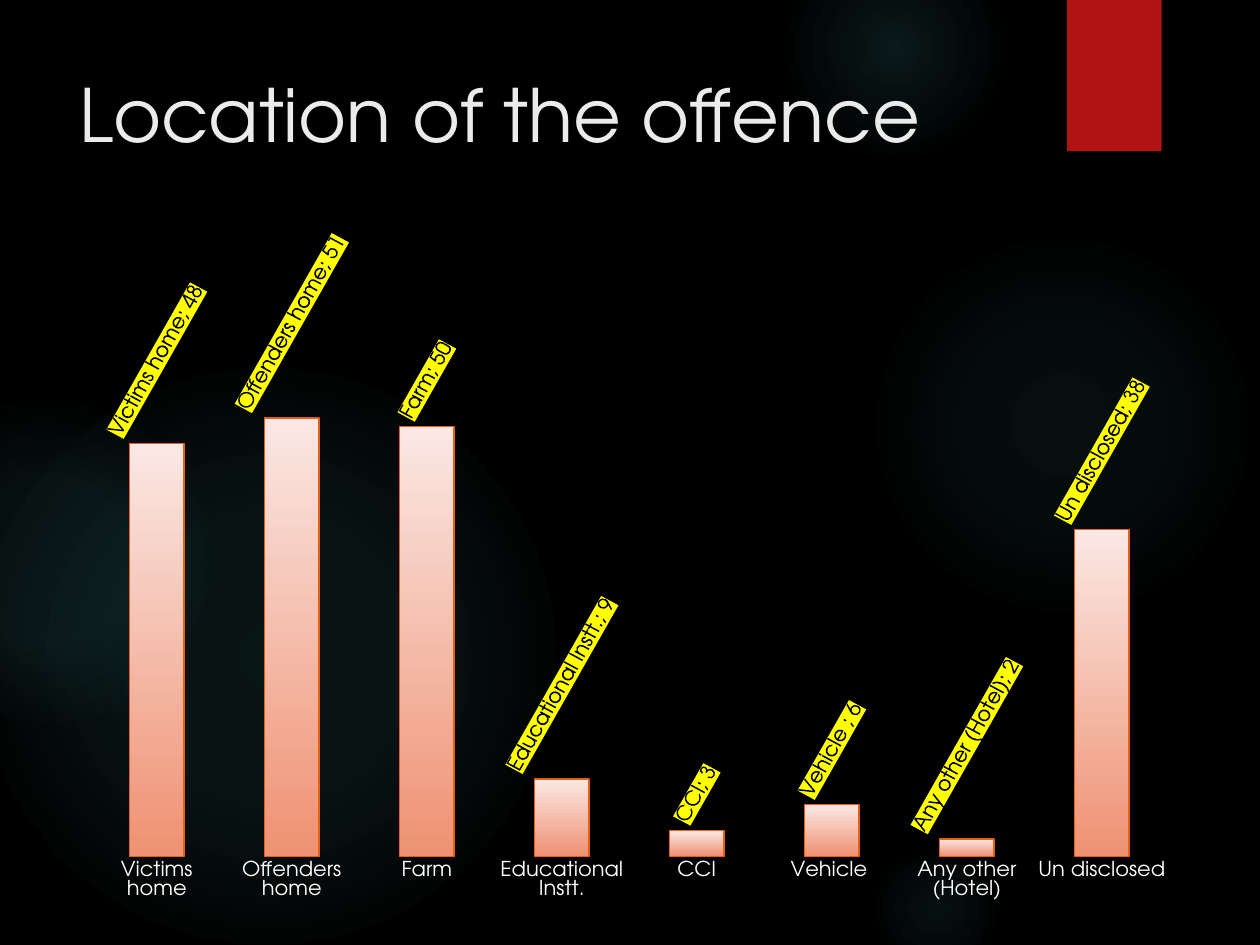
from lxml.etree import SubElement
from pptx import Presentation
from pptx.chart.data import CategoryChartData
from pptx.dml.color import RGBColor
from pptx.enum.chart import XL_CHART_TYPE, XL_LABEL_POSITION, XL_TICK_MARK
from pptx.enum.shapes import MSO_SHAPE
from pptx.enum.text import MSO_ANCHOR
from pptx.oxml import parse_xml
from pptx.oxml.ns import nsdecls, qn
from pptx.util import Inches, Pt

FACE = "TeX Gyre Adventor"
HUES = {"back": "000000", "glow": "50B9C1", "tab": "B01513", "title": "EBEBEB",
        "text": "FFFFFF", "top": "FBE8E4", "base": "EF9173", "edge": "E56112",
        "label": "000000", "mark": "FFFF00"}
WIDE, HIGH = 10, 7.5

# Glows: left, top, size, then (stop, opacity) in percent
GLOWS = [
    (6.89, 1.83, 3.08, [(0, 7), (36, 6), (69, 0)]),
    (6.22, -0.5, 1.75, [(0, 14), (36, 7), (73, 0)]),
    (6.89, 6.67, 1.08, [(0, 9), (36, 5), (66, 0)]),
    (-0.17, 2.92, 4.58, [(0, 11), (36, 10), (75, 0)]),
    (-0.92, 3.17, 2.58, [(0, 8), (36, 8), (72, 0)]),
]
PLACES = {"Victims home": 48, "Offenders home": 51, "Farm": 50,
          "Educational Instt.": 9, "CCI": 3, "Vehicle ": 6,
          "Any other (Hotel)": 2, "Un disclosed": 38}


def hue(name):
    return RGBColor.from_string(HUES[name])


def share(x, y, w, h):
    """Turn shares of the slide into a box of lengths."""
    return [Inches(part * side) for part, side in zip((x, y, w, h), (WIDE, HIGH) * 2)]


def style(font, size, name):
    font.name, font.size = FACE, Pt(size)
    font.color.rgb = hue(name)


def add_form(slide, kind, box):
    form = slide.shapes.add_shape(kind, *box)
    form.shadow.inherit = False
    form.line.fill.background()
    return form


def add_glow(slide, box, stops):
    form = add_form(slide, MSO_SHAPE.OVAL, box)
    marks = "".join(
        f'<a:gs pos="{pos * 1000}"><a:srgbClr val="{HUES["glow"]}">'
        f'<a:alpha val="{alpha * 1000}"/></a:srgbClr></a:gs>' for pos, alpha in stops)
    grad = parse_xml(
        f'<a:gradFill {nsdecls("a")} rotWithShape="1"><a:gsLst>{marks}</a:gsLst>'
        '<a:path path="circle"><a:fillToRect l="50000" t="50000" r="50000" b="50000"/>'
        '</a:path></a:gradFill>')
    form.element.spPr.find(qn("a:prstGeom")).addnext(grad)


def add_back(slide):
    fill = slide.background.fill
    fill.solid()
    fill.fore_color.rgb = hue("back")
    for x, y, size, stops in GLOWS:
        add_glow(slide, [Inches(v) for v in (x, y, size, size)], stops)
    # Red tab
    tab = add_form(slide, MSO_SHAPE.RECTANGLE, share(0.847, 0, 0.075, 0.16))
    tab.fill.solid()
    tab.fill.fore_color.rgb = hue("tab")


def add_title(slide, box):
    frame = slide.shapes.add_textbox(*box).text_frame
    frame.word_wrap = True
    frame.vertical_anchor = MSO_ANCHOR.TOP
    frame.text = "Location of the offence"
    style(frame.paragraphs[0].runs[0].font, 42, "title")


def set_plot(chart, x, y, w, h):
    """Fix the inner plot area as shares of the chart."""
    area = chart.element.find(".//" + qn("c:plotArea"))
    for old in area.findall(qn("c:layout")):
        area.remove(old)
    parts = [("layoutTarget", "inner"), ("xMode", "edge"), ("yMode", "edge"),
             ("x", x), ("y", y), ("w", w), ("h", h)]
    layout = parse_xml(f'<c:layout {nsdecls("c")}><c:manualLayout/></c:layout>')
    for tag, val in parts:
        SubElement(layout[0], qn("c:" + tag)).set("val", str(val))
    area.insert(0, layout)


def set_labels(plot):
    plot.has_data_labels = True
    labels = plot.data_labels
    labels.show_value = labels.show_category_name = True
    labels.position = XL_LABEL_POSITION.OUTSIDE_END
    style(labels.font, 12, "label")
    # Slanted text on a yellow ground
    node = labels._element
    text = node.find(qn("c:txPr"))
    body = text.find(qn("a:bodyPr"))
    body.set("rot", "-3660000")
    body.set("vert", "horz")
    text.addprevious(parse_xml(
        f'<c:spPr {nsdecls("c", "a")}><a:solidFill><a:srgbClr val="{HUES["mark"]}"/>'
        '</a:solidFill></c:spPr>'))
    gap = parse_xml(f'<c:separator {nsdecls("c")}>; </c:separator>')
    last = [kid for kid in node if kid.tag.startswith(qn("c:show"))][-1]
    last.addnext(gap)


def add_bars(slide, box):
    data = CategoryChartData()
    data.categories = list(PLACES)
    data.add_series("Series 1", list(PLACES.values()))
    chart = slide.shapes.add_chart(XL_CHART_TYPE.COLUMN_CLUSTERED, *box, data).chart
    chart.has_legend = chart.has_title = False
    style(chart.font, 10, "text")
    set_plot(chart, 0.02, 0.14, 0.96, 0.79)
    # Axes
    axis = chart.category_axis
    axis.major_tick_mark = axis.minor_tick_mark = XL_TICK_MARK.NONE
    axis.format.line.fill.background()
    style(axis.tick_labels.font, 12, "text")
    scale = chart.value_axis
    scale.minimum_scale, scale.maximum_scale = 0, 60
    scale.has_major_gridlines = False
    scale.visible = False
    # Bars
    plot = chart.plots[0]
    plot.vary_by_categories = False
    plot.gap_width = 148
    form = plot.series[0].format
    form.fill.gradient()
    form.fill.gradient_angle = 270
    for stop, pos, name in zip(form.fill.gradient_stops, (0, 1), ("top", "base")):
        stop.position = pos
        stop.color.rgb = hue(name)
    form.line.color.rgb = hue("edge")
    form.line.width = Pt(0.75)
    set_labels(plot)


def main():
    deck = Presentation()
    deck.slide_width, deck.slide_height = Inches(WIDE), Inches(HIGH)
    slide = deck.slides.add_slide(deck.slide_layouts[6])
    add_back(slide)
    add_title(slide, [Inches(v) for v in (0.53, 0.5, 7.72, 1.53)])
    add_bars(slide, [Inches(v) for v in (0.53, 1.85, 8.93, 5.31)])
    deck.save("out.pptx")


if __name__ == "__main__":
    main()
